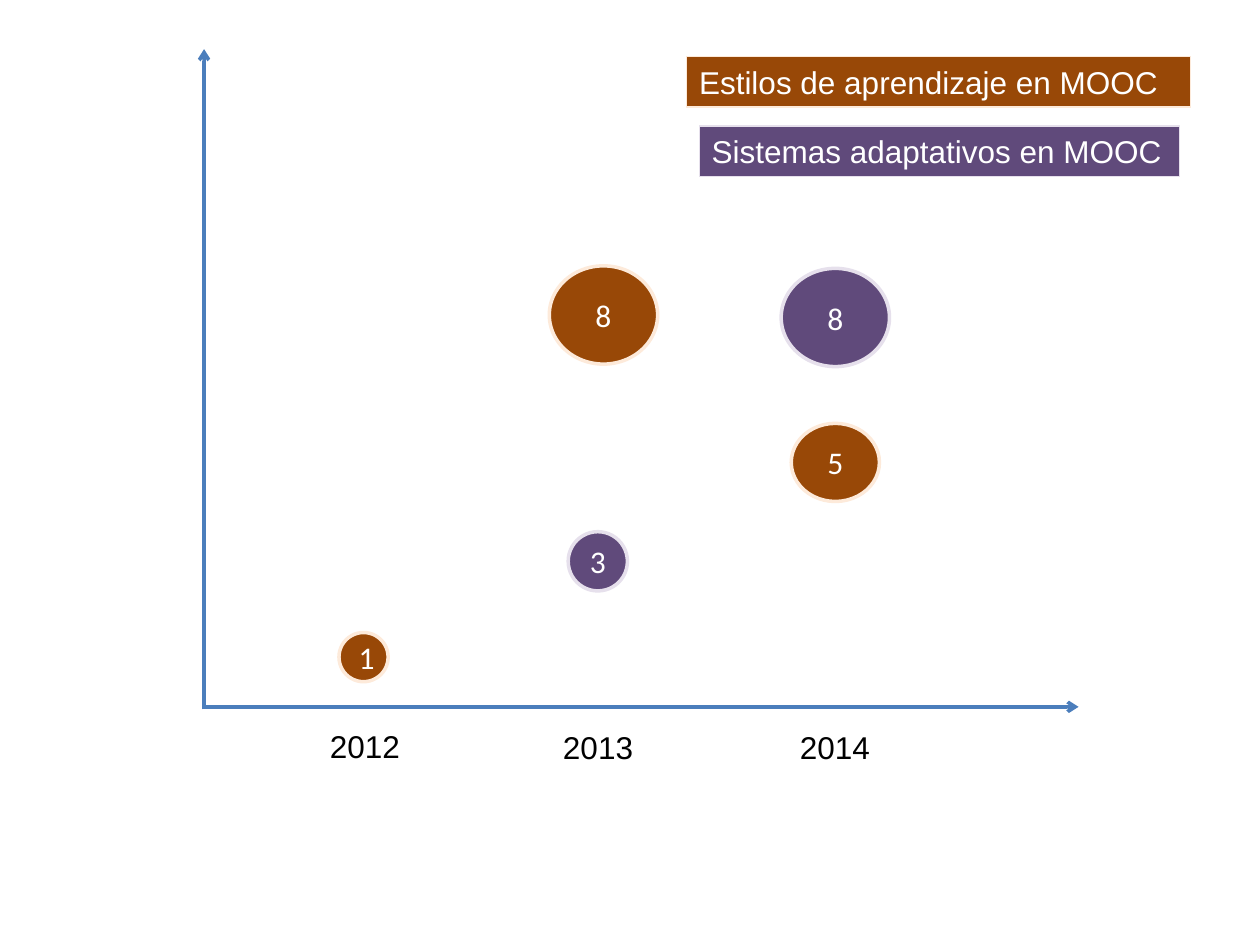
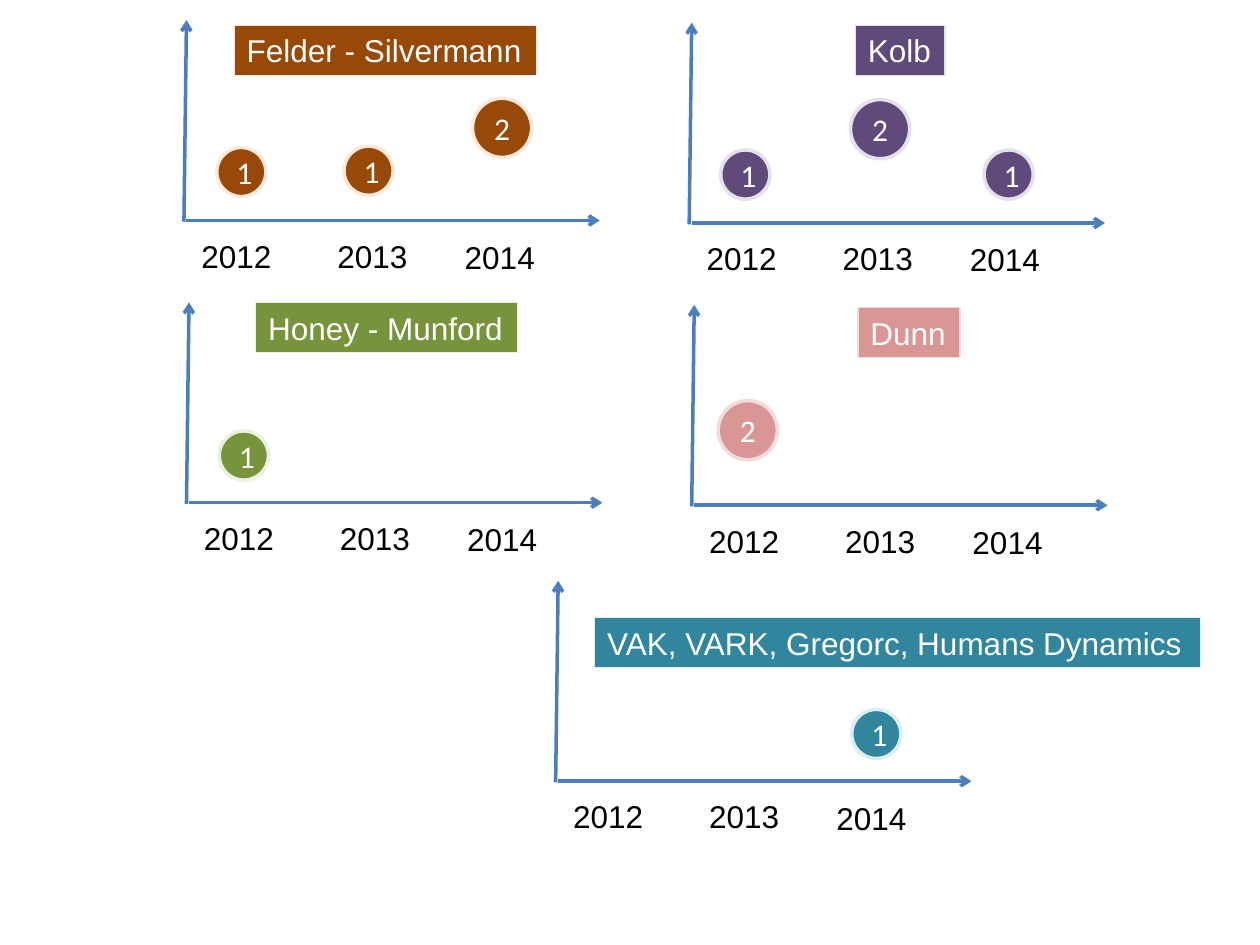
import dataclasses

import lxml.etree
import pptx
import pptx.dml.color
import pptx.enum.shapes
import pptx.enum.text
import pptx.oxml.ns
import pptx.slide
import pptx.util

Inches = pptx.util.Inches
Pt = pptx.util.Pt
ShapeType = pptx.enum.shapes.MSO_SHAPE

COLORS = {
    "axis": "4B7EBC", "black": "000000", "white": "FFFFFF",
    "brown": "984807", "brown_edge": "FDEADA",
    "purple": "604A7B", "purple_edge": "E6E0EC",
    "green": "77933C", "green_edge": "EBF1DE",
    "pink": "D99694", "pink_edge": "F2DCDB",
    "teal": "31859C", "teal_edge": "DBEEF4",
}
YEARS = ("2012", "2013", "2014")
LABEL_WIDTH, LABEL_HEIGHT = 0.76, 0.4
SMALL, MEDIUM = 0.39, 0.47  # bubble diameters for 1 and for 2 or 3 works


@dataclasses.dataclass(frozen=True)
class Tag:
    text: str
    color: str
    left: float
    top: float
    width: float


@dataclasses.dataclass(frozen=True)
class Bubble:
    count: int
    color: str
    left: float
    top: float
    width: float = SMALL
    height: float = SMALL


@dataclasses.dataclass(frozen=True)
class Axes:
    """Axes from an origin; year offsets are (right, down) from that origin."""
    left: float
    top: float
    width: float = 3.28
    height: float = 1.59
    lean: float = 0.02
    overshoot: float = 0.01
    year_offsets: tuple[tuple[float, float], ...] = ((0.02, 0.08), (1.1, 0.08), (2.11, 0.09))


OVERVIEW_AXES = Axes(1.62, 5.61, 6.94, 5.22, lean=0, overshoot=0.02,
                     year_offsets=((0.9, 0.11), (2.75, 0.12), (4.63, 0.12)))
OVERVIEW_TAGS = (
    Tag("Estilos de aprendizaje en MOOC", "brown", 5.45, 0.45, 4),
    Tag("Sistemas adaptativos en MOOC", "purple", 5.55, 1, 3.81),
)
OVERVIEW_BUBBLES = (
    Bubble(1, "brown", 2.69, 5.02),
    Bubble(8, "brown", 4.36, 2.11, 0.86, 0.78),
    Bubble(5, "brown", 6.28, 3.36, 0.7, 0.62),
    Bubble(3, "purple", 4.51, 4.22, MEDIUM, MEDIUM),
    Bubble(8, "purple", 6.2, 2.13, 0.86, 0.78),
)

MODEL_AXES = (Axes(1.48, 1.75), Axes(5.49, 1.77), Axes(1.5, 3.99),
              Axes(5.51, 4.01), Axes(4.43, 6.2))
MODEL_TAGS = (
    Tag("Felder - Silvermann", "brown", 1.86, 0.2, 2.4),
    Tag("Kolb", "purple", 6.79, 0.2, 0.71),
    Tag("Honey - Munford", "green", 2.03, 2.4, 2.08),
    Tag("Dunn", "pink", 6.81, 2.44, 0.81),
    Tag("VAK, VARK, Gregorc, Humans Dynamics", "teal", 4.72, 4.9, 4.81),
)
MODEL_BUBBLES = (
    Bubble(1, "brown", 1.72, 1.17),
    Bubble(1, "brown", 2.73, 1.16),
    Bubble(2, "brown", 3.75, 0.78, MEDIUM, MEDIUM),
    Bubble(1, "purple", 5.72, 1.19),
    Bubble(2, "purple", 6.75, 0.79, MEDIUM, MEDIUM),
    Bubble(1, "purple", 7.81, 1.19),
    Bubble(1, "green", 1.74, 3.42),
    Bubble(2, "pink", 5.7, 3.18, MEDIUM, MEDIUM),
    Bubble(1, "teal", 6.76, 5.63),
)


def rgb(name: str) -> pptx.dml.color.RGBColor:
    return pptx.dml.color.RGBColor.from_string(COLORS[name])


def write_text(shape, text: str, *, font: str = "Arial", color: str = "white",
               centered: bool = False) -> None:
    frame = shape.text_frame
    frame.word_wrap = True
    paragraph = frame.paragraphs[0]
    paragraph.text = text
    paragraph.font.name = font
    paragraph.font.size = Pt(18)
    paragraph.font.color.rgb = rgb(color)
    if centered:
        frame.vertical_anchor = pptx.enum.text.MSO_ANCHOR.MIDDLE
        paragraph.alignment = pptx.enum.text.PP_ALIGN.CENTER
    else:
        frame.vertical_anchor = pptx.enum.text.MSO_ANCHOR.TOP
        paragraph.alignment = pptx.enum.text.PP_ALIGN.LEFT
        frame.margin_right = 0


def draw_filled_shape(slide: pptx.slide.Slide, kind: ShapeType, color: str, edge_width: float,
                      left: float, top: float, width: float, height: float):
    shape = slide.shapes.add_shape(kind, Inches(left), Inches(top), Inches(width), Inches(height))
    shape.shadow.inherit = False
    shape.fill.solid()
    shape.fill.fore_color.rgb = rgb(color)
    shape.line.color.rgb = rgb(f"{color}_edge")
    shape.line.width = Pt(edge_width)
    return shape


def draw_tag(slide: pptx.slide.Slide, tag: Tag) -> None:
    shape = draw_filled_shape(slide, ShapeType.RECTANGLE, tag.color, 0.75,
                              tag.left, tag.top, tag.width, LABEL_HEIGHT)
    write_text(shape, tag.text)


def draw_bubble(slide: pptx.slide.Slide, bubble: Bubble) -> None:
    shape = draw_filled_shape(slide, ShapeType.OVAL, bubble.color, 2,
                              bubble.left, bubble.top, bubble.width, bubble.height)
    write_text(shape, str(bubble.count), font="Calibri", centered=True)


def draw_arrow(slide: pptx.slide.Slide, start: tuple[float, float],
               end: tuple[float, float]) -> None:
    connector = slide.shapes.add_connector(
        pptx.enum.shapes.MSO_CONNECTOR.STRAIGHT, *map(Inches, start + end))
    connector.line.color.rgb = rgb("axis")
    connector.line.width = Pt(2)
    properties = connector.element.spPr
    line = properties.find(pptx.oxml.ns.qn("a:ln"))
    lxml.etree.SubElement(line, pptx.oxml.ns.qn("a:tailEnd"), type="arrow")
    lxml.etree.SubElement(properties, pptx.oxml.ns.qn("a:effectLst"))


def draw_axes(slide: pptx.slide.Slide, axes: Axes) -> None:
    draw_arrow(slide, (axes.left - axes.lean, axes.top + axes.overshoot),
               (axes.left, axes.top - axes.height))
    draw_arrow(slide, (axes.left, axes.top), (axes.left + axes.width, axes.top))
    for year, (right, down) in zip(YEARS, axes.year_offsets):
        label = slide.shapes.add_textbox(Inches(axes.left + right), Inches(axes.top + down),
                                         Inches(LABEL_WIDTH), Inches(LABEL_HEIGHT))
        write_text(label, year, color="black")


def add_bubble_slide(presentation, all_axes: tuple[Axes, ...], tags: tuple[Tag, ...],
                     bubbles: tuple[Bubble, ...]) -> None:
    slide = presentation.slides.add_slide(presentation.slide_layouts[6])
    for axes in all_axes:
        draw_axes(slide, axes)
    for tag in tags:
        draw_tag(slide, tag)
    for bubble in bubbles:
        draw_bubble(slide, bubble)


def main() -> None:
    presentation = pptx.Presentation()
    presentation.slide_width = Inches(10)
    presentation.slide_height = Inches(7.5)
    add_bubble_slide(presentation, (OVERVIEW_AXES,), OVERVIEW_TAGS, OVERVIEW_BUBBLES)
    add_bubble_slide(presentation, MODEL_AXES, MODEL_TAGS, MODEL_BUBBLES)
    presentation.save("out.pptx")


if __name__ == "__main__":
    main()
